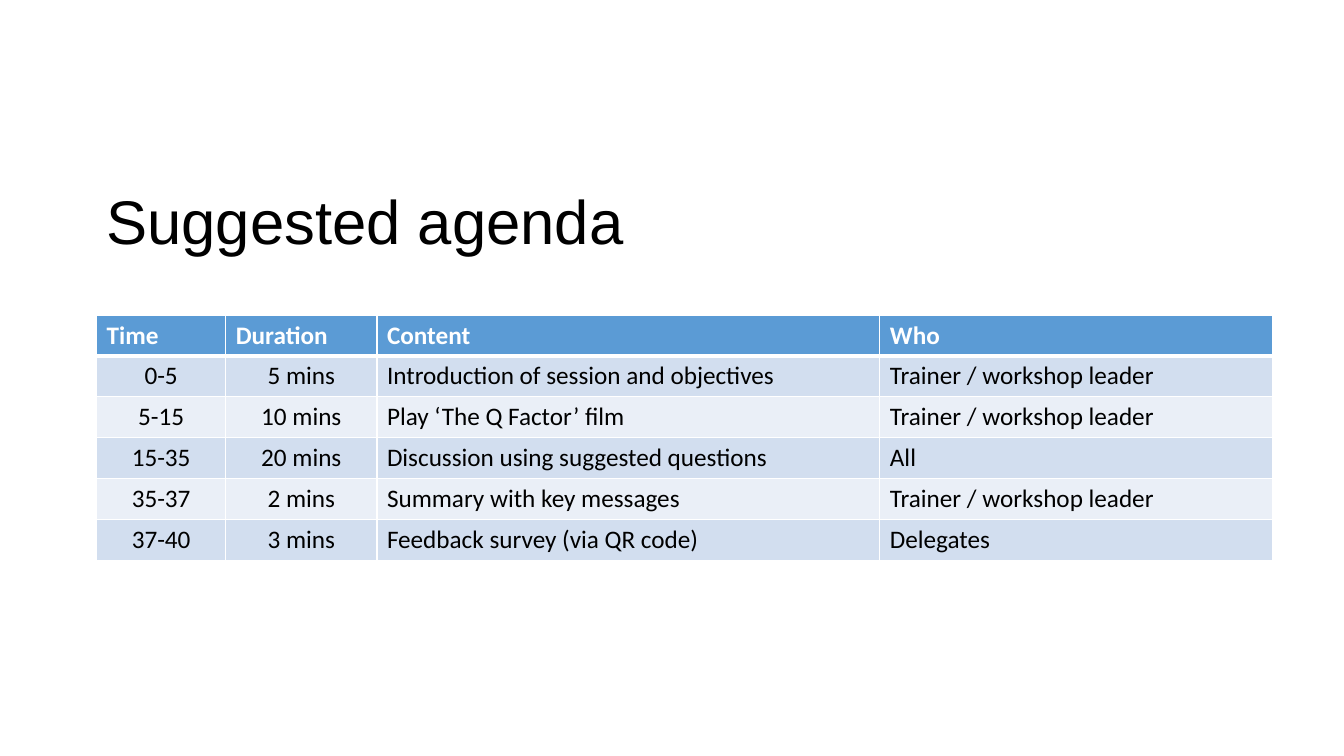
"""Build the suggested agenda slide."""
from lxml.etree import SubElement
from pptx import Presentation
from pptx.dml.color import RGBColor
from pptx.enum.text import MSO_ANCHOR, PP_ALIGN
from pptx.oxml.ns import qn
from pptx.util import Emu, Pt

EMU_PER_PX = 9525
WHITE, BLACK = "FFFFFF", "000000"
HEADER_FILL = "5B9BD5"
BAND_FILLS = ("D2DEEF", "EAEFF7")
COLUMN_WIDTHS = (123, 144, 479, 374)
ROW_HEIGHT = 39
CENTRED_COLUMNS = 2
AGENDA = (
    ("Time", "Duration", "Content", "Who"),
    ("0-5", "5 mins", "Introduction of session and objectives", "Trainer / workshop leader"),
    ("5-15", "10 mins", "Play ‘The Q Factor’ film", "Trainer / workshop leader"),
    ("15-35", "20 mins", "Discussion using suggested questions", "All"),
    ("35-37", "2 mins", "Summary with key messages", "Trainer / workshop leader"),
    ("37-40", "3 mins", "Feedback survey (via QR code)", "Delegates"),
)


def px(length):
    return Emu(length * EMU_PER_PX)


def color(value):
    return RGBColor.from_string(value)


def add_run(paragraph, text, font_name, size, text_color, bold=False):
    run = paragraph.add_run()
    run.text = text
    run.font.name = font_name
    run.font.size = Pt(size)
    run.font.bold = bold
    run.font.color.rgb = color(text_color)


def add_title(slide, text):
    frame = slide.shapes.add_textbox(px(92), px(0), px(960), px(250)).text_frame
    frame.word_wrap = True
    frame.vertical_anchor = MSO_ANCHOR.BOTTOM
    paragraph = frame.paragraphs[0]
    paragraph.line_spacing = 0.9
    add_run(paragraph, text, "Arial", 44, BLACK)


def set_borders(cell, top, bottom):
    properties = cell._tc.get_or_add_tcPr()
    widths = {"a:lnL": 1, "a:lnR": 1, "a:lnT": top, "a:lnB": bottom}
    for position, (tag, width) in enumerate(widths.items()):
        line = SubElement(properties, qn(tag), w=str(Pt(width)))
        fill = SubElement(line, qn("a:solidFill"))
        SubElement(fill, qn("a:srgbClr"), val=WHITE)
        properties.insert(position, line)


def fill_cell(cell, text, row, column):
    is_header = row == 0
    cell.fill.solid()
    cell.fill.fore_color.rgb = color(HEADER_FILL if is_header else BAND_FILLS[(row - 1) % 2])
    set_borders(cell, top=3 if row == 1 else 1, bottom=3 if is_header else 1)
    paragraph = cell.text_frame.paragraphs[0]
    if not is_header and column < CENTRED_COLUMNS:
        paragraph.alignment = PP_ALIGN.CENTER
    add_run(paragraph, text, "Calibri", 18, WHITE if is_header else BLACK, is_header)


def add_agenda(slide):
    table = slide.shapes.add_table(
        len(AGENDA), len(COLUMN_WIDTHS), px(92), px(300),
        px(sum(COLUMN_WIDTHS)), px(ROW_HEIGHT * len(AGENDA)),
    ).table
    for column, width in zip(table.columns, COLUMN_WIDTHS):
        column.width = px(width)
    for row, texts in enumerate(AGENDA):
        table.rows[row].height = px(ROW_HEIGHT)
        for column, text in enumerate(texts):
            fill_cell(table.cell(row, column), text, row, column)


def main():
    presentation = Presentation()
    presentation.slide_width = px(1280)
    presentation.slide_height = px(720)
    slide = presentation.slides.add_slide(presentation.slide_layouts[6])
    add_title(slide, "Suggested agenda")
    add_agenda(slide)
    presentation.save("out.pptx")


if __name__ == "__main__":
    main()
